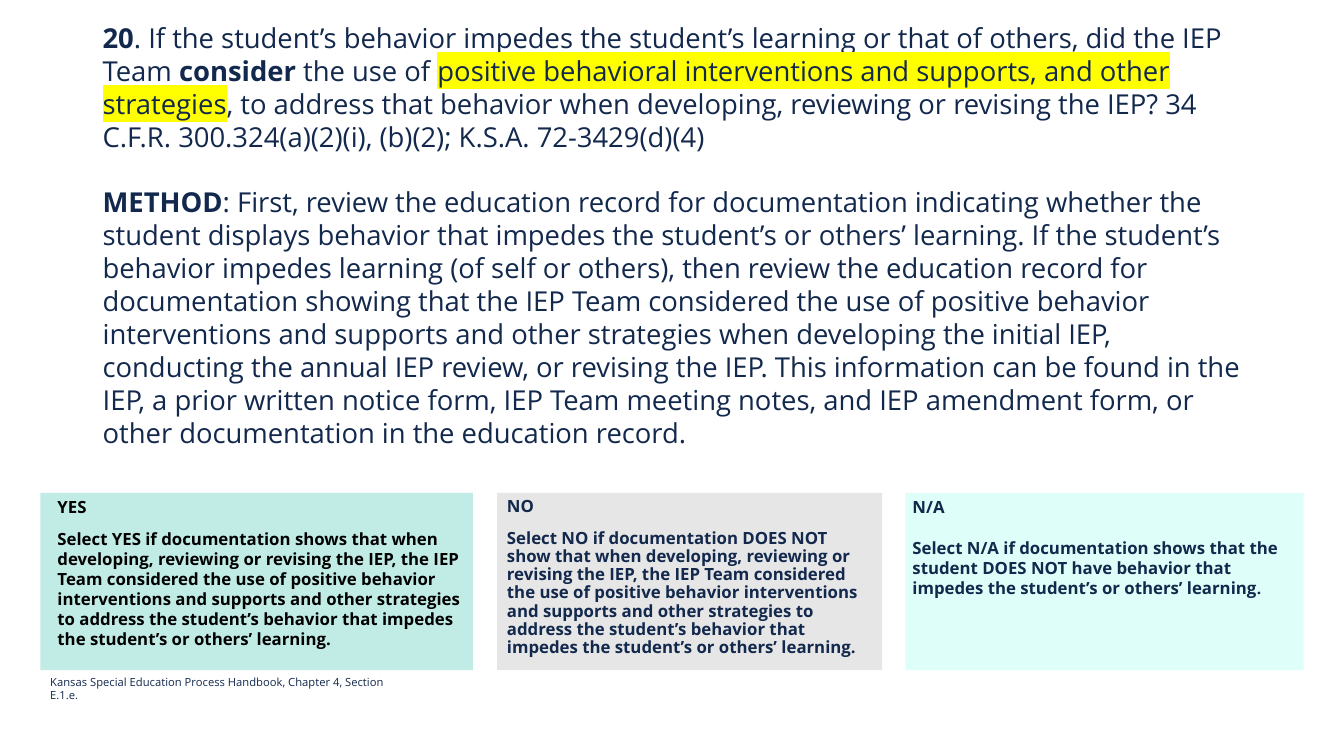
import lxml.etree
import pptx
import pptx.dml.color
import pptx.enum.shapes
import pptx.enum.text
import pptx.oxml.ns
import pptx.util

Inches = pptx.util.Inches
Pt = pptx.util.Pt
NAVY = "12284C"
FONT = "Open Sans"

QUESTION = [
    ("20", "bold"),
    (". If the student’s behavior impedes the student’s learning or that of others, did the IEP Team ", ""),
    ("consider", "bold"),
    (" the use of ", ""),
    ("positive behavioral interventions and supports, and other strategies", "highlight"),
    (", to address that behavior when developing, reviewing or revising the IEP? "
     "34 C.F.R. 300.324(a)(2)(i), (b)(2); K.S.A. 72-3429(d)(4)", ""),
]
METHOD = [
    ("METHOD", "bold"),
    (": First, review the education record for documentation indicating whether the student displays "
     "behavior that impedes the student’s or others’ learning. If the student’s behavior impedes learning "
     "(of self or others), then review the education record for documentation showing that the IEP Team "
     "considered the use of positive behavior interventions and supports and other strategies when "
     "developing the initial IEP, conducting the annual IEP review, or revising the IEP. This information "
     "can be found in the IEP, a prior written notice form, IEP Team meeting notes, and IEP amendment form, "
     "or other documentation in the education record.", ""),
]
CONSIDERED = (
    "show{} that when developing, reviewing or revising the IEP, the IEP Team considered the use of "
    "positive behavior interventions and supports and other strategies to address the student’s behavior "
    "that impedes the student’s or others’ learning.")
ANSWERS = [
    dict(left=0.4, width=4.29, fill="C1ECE5", color="000000", inset=(0.07, 0.04),
         indent=0.1, gap=8, spacing=1.0, heading="YES",
         runs=[("Select YES if documentation " + CONSIDERED.format("s"), 12)]),
    dict(left=4.93, width=3.82, fill="E6E6E6", color=NAVY, inset=(0.1, 0.05),
         indent=0, gap=10, spacing=0.9, heading="NO",
         runs=[("Select NO if documentation DOES NOT " + CONSIDERED.format(""), 12)]),
    dict(left=8.98, width=3.95, fill="DEFFF9", color=NAVY, inset=(0.07, 0.04),
         indent=0, gap=14.4, spacing=1.0, heading="N/A",
         runs=[("Select N/A if documentation shows that the student DOES NOT have behavior "
                "that impedes the student’s or others’ learning", 12), (".", 11)]),
]


def rgb(value):
    return pptx.dml.color.RGBColor.from_string(value)


def set_font(paragraph, size, color, bold=None):
    paragraph.alignment = pptx.enum.text.PP_ALIGN.LEFT
    paragraph.font.name = FONT
    paragraph.font.size = Pt(size)
    paragraph.font.color.rgb = rgb(color)
    paragraph.font.bold = bold


def highlight(run, color):
    properties = run.font._element
    mark = lxml.etree.SubElement(properties, pptx.oxml.ns.qn("a:highlight"))
    lxml.etree.SubElement(mark, pptx.oxml.ns.qn("a:srgbClr"), val=color)


def add_text_box(slide, left, top, width, height):
    box = slide.shapes.add_textbox(Inches(left), Inches(top), Inches(width), Inches(height))
    box.text_frame.word_wrap = True
    return box.text_frame


def add_question(slide, left, top, width, height):
    frame = add_text_box(slide, left, top, width, height)
    question = frame.paragraphs[0]
    method = frame.add_paragraph()
    method.space_before = Pt(23.5)
    for paragraph, runs in ((question, QUESTION), (method, METHOD)):
        set_font(paragraph, 19.6, NAVY)
        for text, style in runs:
            run = paragraph.add_run()
            run.text = text
            if style == "bold":
                run.font.bold = True
            elif style == "highlight":
                highlight(run, "FFFF00")


def add_answer(slide, answer, top, height):
    shape = slide.shapes.add_shape(
        pptx.enum.shapes.MSO_SHAPE.RECTANGLE, Inches(answer["left"]), Inches(top),
        Inches(answer["width"]), Inches(height))
    shape.shadow.inherit = False
    shape.fill.solid()
    shape.fill.fore_color.rgb = rgb(answer["fill"])
    shape.line.fill.background()
    frame = shape.text_frame
    frame.word_wrap = True
    frame.vertical_anchor = pptx.enum.text.MSO_ANCHOR.TOP
    side, edge = answer["inset"]
    frame.margin_left = frame.margin_right = Inches(side)
    frame.margin_top = frame.margin_bottom = Inches(edge)
    heading = frame.paragraphs[0]
    explanation = frame.add_paragraph()
    explanation.space_before = Pt(answer["gap"])
    for paragraph, runs in ((heading, [(answer["heading"], 12)]), (explanation, answer["runs"])):
        paragraph.line_spacing = answer["spacing"]
        paragraph._p.get_or_add_pPr().set("marL", str(Inches(answer["indent"])))
        set_font(paragraph, 12, answer["color"], True)
        for text, size in runs:
            run = paragraph.add_run()
            run.text = text
            if size != 12:
                run.font.size = Pt(size)


def add_reference(slide, left, top, width, height):
    paragraph = add_text_box(slide, left, top, width, height).paragraphs[0]
    paragraph.text = "Kansas Special Education Process Handbook, Chapter 4, Section E.1.e."
    set_font(paragraph, 8, NAVY)


def main():
    presentation = pptx.Presentation()
    presentation.slide_width = Inches(13.33)
    presentation.slide_height = Inches(7.5)
    slide = presentation.slides.add_slide(presentation.slide_layouts[6])
    add_question(slide, 0.92, 0.16, 11.5, 4.59)
    for answer in ANSWERS:
        add_answer(slide, answer, 4.89, 1.76)
    add_reference(slide, 0.4, 6.65, 3.73, 0.24)
    presentation.save("out.pptx")


if __name__ == "__main__":
    main()
